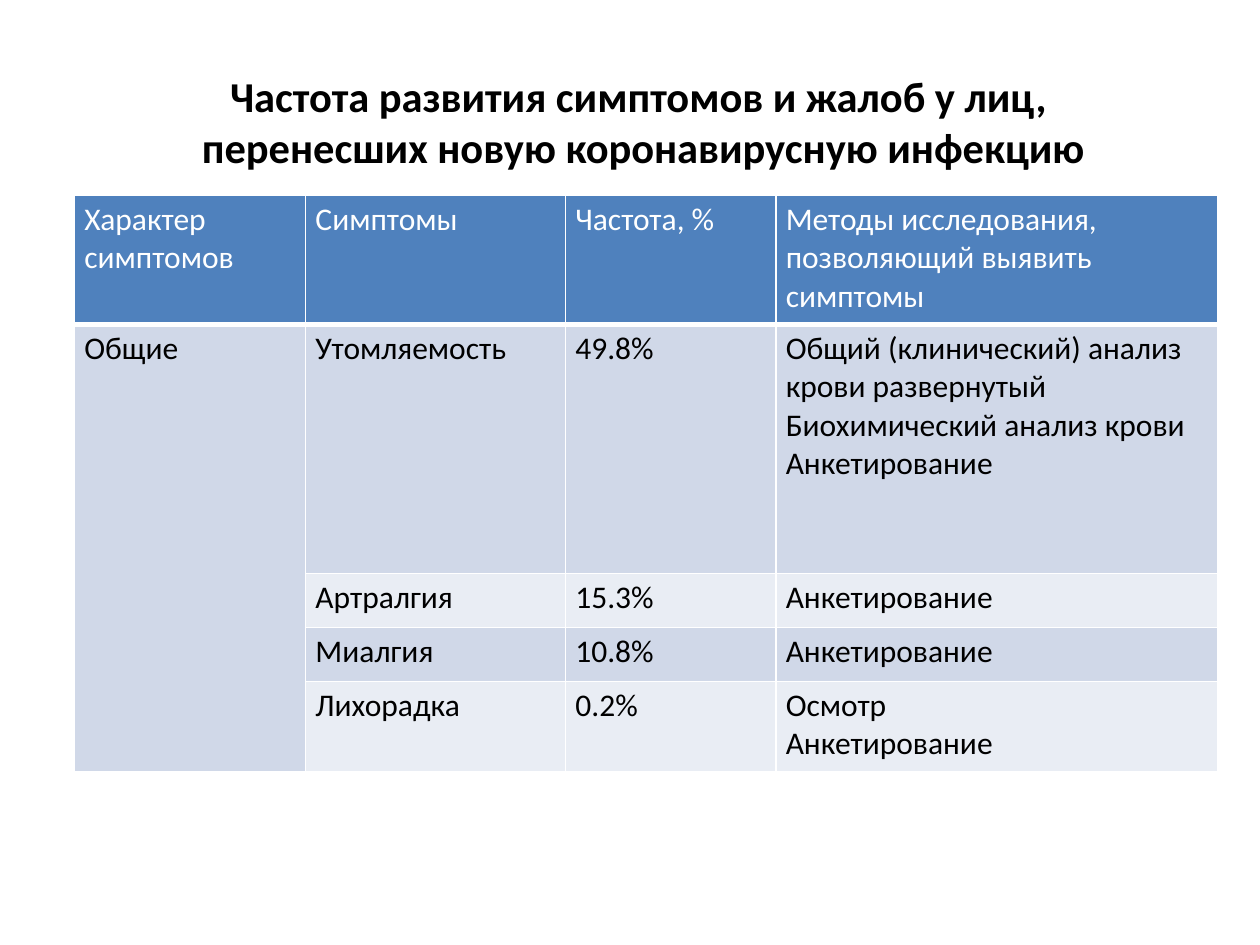
import pptx
import pptx.dml.color
import pptx.enum.text
import pptx.oxml
import pptx.oxml.ns
import pptx.util
from pptx.util import Cm

WHITE, BLACK = "FFFFFF", "000000"
HEADER_FILL = "4F81BD"
BAND_FILLS = ("D0D8E8", "E9EDF4")
FONT = "Calibri"

# A vertical tab is a line break inside a paragraph
TITLE = "Частота развития симптомов и жалоб у лиц, \vперенесших новую коронавирусную инфекцию"
HEADINGS = ("Характер симптомов", "Симптомы", "Частота, %",
            "Методы исследования, позволяющий выявить симптомы")
SYMPTOMS = (
    ("Общие", "Утомляемость", "49.8%",
     "Общий (клинический) анализ крови развернутый\v"
     "Биохимический анализ крови\vАнкетирование"),
    ("", "Артралгия", "15.3%", "Анкетирование"),
    ("", "Миалгия", "10.8%", "Анкетирование"),
    ("", "Лихорадка", "0.2%", "Осмотр\vАнкетирование"),
)
COLUMN_WIDTHS = (4.66, 5.24, 4.24, 8.9)
ROW_HEIGHTS = (2.6, 5.02, 1.09, 1.09, 1.82)


def rgb(hex_colour):
    return pptx.dml.color.RGBColor.from_string(hex_colour)


def style_font(font, size, colour, bold=False):
    font.name = FONT
    font.size = pptx.util.Pt(size)
    font.bold = bold
    font.color.rgb = rgb(colour)


def set_borders(cell, bottom_points):
    """White grid lines; the border elements come before the cell fill."""
    properties = cell._tc.get_or_add_tcPr()
    widths = (("lnL", 1), ("lnR", 1), ("lnT", 1), ("lnB", bottom_points))
    for position, (side, points) in enumerate(widths):
        border = pptx.oxml.parse_xml(
            f'<a:{side} {pptx.oxml.ns.nsdecls("a")} w="{pptx.util.Pt(points)}">'
            f'<a:solidFill><a:srgbClr val="{WHITE}"/></a:solidFill></a:{side}>')
        properties.insert(position, border)


def add_title(slide, left, top, width, height):
    title = slide.shapes.add_textbox(left, top, width, height)
    frame = title.text_frame
    frame.word_wrap = True
    frame.vertical_anchor = pptx.enum.text.MSO_ANCHOR.BOTTOM
    frame.margin_top = 0
    frame.margin_bottom = Cm(1.17)
    frame.text = TITLE
    heading = frame.paragraphs[0]
    heading.alignment = pptx.enum.text.PP_ALIGN.CENTER
    style_font(heading.font, 24.3, BLACK, bold=True)


def fill_cell(cell, text, fill, colour, bottom_points):
    cell.fill.solid()
    cell.fill.fore_color.rgb = rgb(fill)
    cell.margin_left = cell.margin_right = Cm(0.2)
    cell.margin_top = cell.margin_bottom = Cm(0.1)
    cell.text = text
    style_font(cell.text_frame.paragraphs[0].font, 18, colour)
    set_borders(cell, bottom_points)


def add_symptom_table(slide, left, top):
    rows = (HEADINGS,) + SYMPTOMS
    table = slide.shapes.add_table(
        len(rows), len(HEADINGS), left, top,
        Cm(sum(COLUMN_WIDTHS)), Cm(sum(ROW_HEIGHTS))).table
    for column, width in zip(table.columns, COLUMN_WIDTHS):
        column.width = Cm(width)
    for row, height in zip(table.rows, ROW_HEIGHTS):
        row.height = Cm(height)

    for row_number, texts in enumerate(rows):
        is_header = row_number == 0
        fill = HEADER_FILL if is_header else BAND_FILLS[(row_number - 1) % 2]
        for column_number, text in enumerate(texts):
            fill_cell(table.cell(row_number, column_number), text, fill,
                      WHITE if is_header else BLACK, 3 if is_header else 1)

    # The symptom group spans all its symptoms
    table.cell(1, 0).merge(table.cell(len(SYMPTOMS), 0))


def main():
    deck = pptx.Presentation()
    deck.slide_width, deck.slide_height = Cm(25.4), Cm(19.05)
    slide = deck.slides.add_slide(deck.slide_layouts[6])
    add_title(slide, Cm(1.5), Cm(1.73), Cm(22.94), Cm(2.9))
    add_symptom_table(slide, Cm(1.5), Cm(3.94))
    deck.save("out.pptx")


if __name__ == "__main__":
    main()
